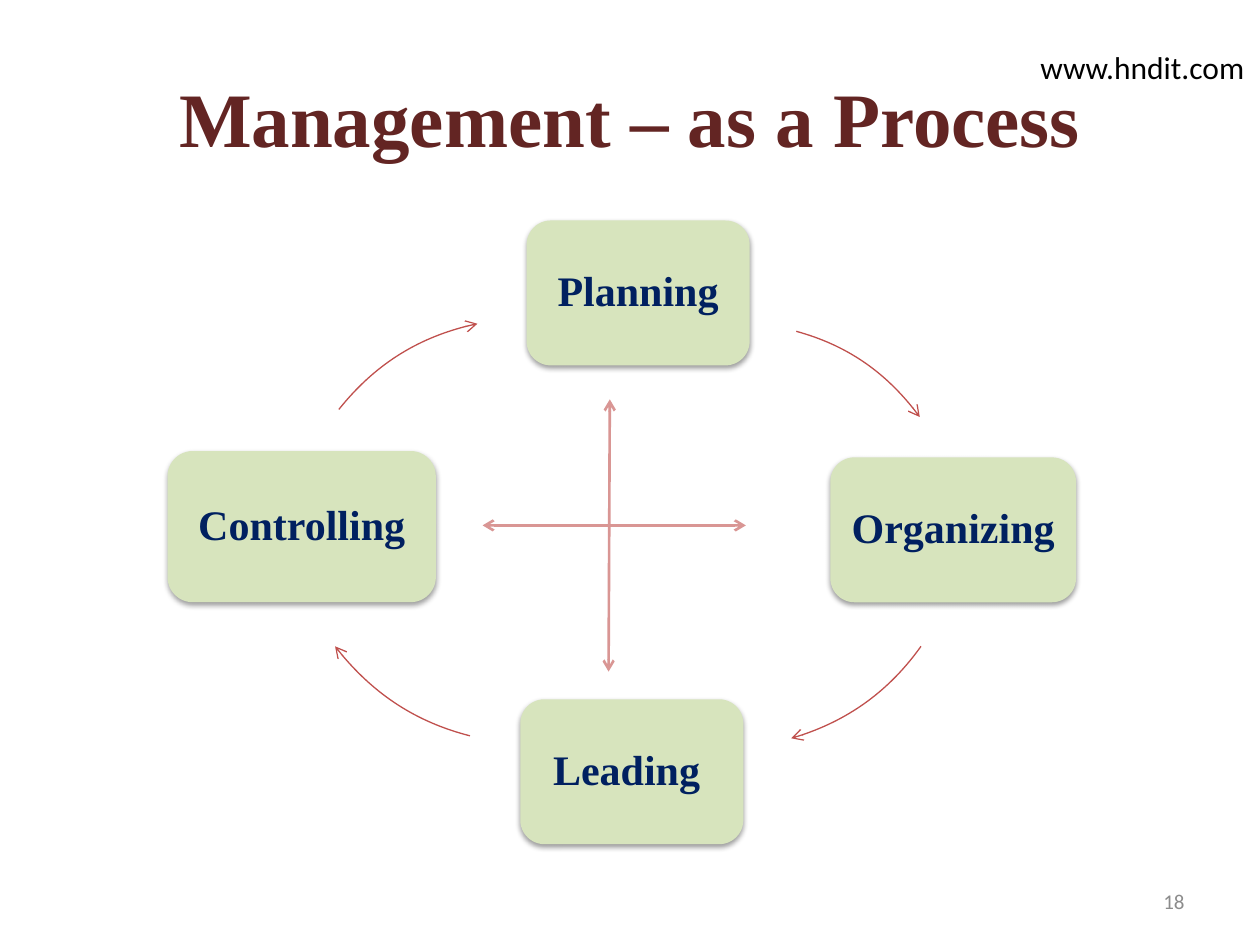
from lxml import etree
from pptx import Presentation
from pptx.dml.color import RGBColor
from pptx.enum.shapes import MSO_CONNECTOR, MSO_SHAPE
from pptx.enum.text import MSO_ANCHOR, PP_ALIGN
from pptx.oxml.ns import qn
from pptx.util import Inches, Pt

COLORS = {"title": "632523", "box": "D7E4BD", "label": "002060", "arc": "C0504D",
          "cross": "D99694", "number": "8C8C8C", "url": "000000"}

# text, box, anchor, alignment, wrap, font
TEXTS = [
    ("Management – as a Process", (0.5, 0.3, 9, 1.25), MSO_ANCHOR.MIDDLE, PP_ALIGN.CENTER, True,
     {"name": "Times New Roman", "size": Pt(44), "bold": True, "color": "title"}),
    ("18", (7.17, 6.95, 2.33, 0.4), MSO_ANCHOR.MIDDLE, PP_ALIGN.RIGHT, True,
     {"name": "Calibri", "size": Pt(12), "color": "number"}),
    ("www.hndit.com", (8.16, 0.33, 1.84, 0.4), MSO_ANCHOR.TOP, PP_ALIGN.LEFT, False,
     {"name": "Calibri", "size": Pt(18), "color": "url"}),
]
LABEL_FONT = {"name": "Times New Roman", "size": Pt(24), "bold": True, "color": "label"}
STEPS = [
    ("Planning", (4.18, 1.75, 1.77, 1.15)),
    ("Organizing ", (6.59, 3.63, 1.95, 1.15)),
    ("Leading ", (4.13, 5.55, 1.77, 1.15)),
    ("Controlling", (1.33, 3.58, 2.13, 1.2)),
]
# corner of the square around the whole circle; start, two control points, end of the curve
CIRCLE = 3.8
ARCS = [
    ((3.89, 2.55), [(6.32, 2.63), (6.72, 2.74), (7.06, 2.98), (7.3, 3.31)]),
    ((3.87, 2.13), [(7.31, 5.13), (7.06, 5.48), (6.7, 5.74), (6.28, 5.86)]),
    ((2.28, 2.09), [(3.73, 5.84), (3.3, 5.73), (2.93, 5.48), (2.66, 5.13)]),
    ((2.28, 2.53), [(2.69, 3.25), (2.97, 2.9), (3.35, 2.66), (3.79, 2.57)]),
]
CROSS = [(4.84, 3.17, 4.83, 5.33), (3.83, 4.17, 5.92, 4.17)]


def inches(values):
    return [Inches(v) for v in values]


def rgb(key):
    return RGBColor.from_string(COLORS[key])


def write(sp, text, font, anchor, align, wrap=True):
    tf = sp.text_frame
    tf.word_wrap = wrap
    tf.vertical_anchor = anchor
    p = tf.paragraphs[0]
    p.alignment = align
    r = p.add_run()
    r.text = text
    for name, value in font.items():
        if name == "color":
            r.font.color.rgb = rgb(value)
        else:
            setattr(r.font, name, value)
    return tf


def add_soft_shadow(sp):
    sp.shadow.inherit = False
    effects = sp._element.spPr.find(qn("a:effectLst"))
    shadow = etree.SubElement(effects, qn("a:outerShdw"), blurRad="40000", dist="20000",
                              dir="5400000", rotWithShape="0")
    color = etree.SubElement(shadow, qn("a:srgbClr"), val="000000")
    etree.SubElement(color, qn("a:alpha"), val="38000")


def style_line(sp, color, width, ends):
    sp.line.color.rgb = rgb(color)
    sp.line.width = Pt(width)
    for end in ends:
        etree.SubElement(sp.line._get_or_add_ln(), qn(f"a:{end}"), type="arrow")


def add_step(s, label, box):
    sp = s.shapes.add_shape(MSO_SHAPE.ROUNDED_RECTANGLE, *inches(box))
    sp.fill.solid()
    sp.fill.fore_color.rgb = rgb("box")
    sp.line.fill.background()
    add_soft_shadow(sp)
    tf = write(sp, label, LABEL_FONT, MSO_ANCHOR.MIDDLE, PP_ALIGN.CENTER)
    tf.paragraphs[0].line_spacing = 0.9
    for side in ("left", "right", "top", "bottom"):
        setattr(tf, f"margin_{side}", Inches(0.1))


def add_arc(s, corner, points):
    """Draw one cubic curve inside the square of its whole circle."""
    start, *rest = [inches(pt) for pt in points]
    fb = s.shapes.build_freeform(*start)
    fb.add_line_segments(rest, close=False)
    sp = fb.convert_to_shape()
    path = sp._element.spPr.find(".//" + qn("a:path"))
    curve = etree.Element(qn("a:cubicBezTo"))
    for segment in path.findall(qn("a:lnTo")):
        curve.append(segment[0])
        path.remove(segment)
    path.append(curve)

    left, top = inches(corner)
    shift = {"x": sp.left - left, "y": sp.top - top}
    for pt in path.iter(qn("a:pt")):
        for axis, offset in shift.items():
            pt.set(axis, str(int(pt.get(axis)) + offset))
    for side in ("w", "h"):
        path.set(side, str(Inches(CIRCLE)))
    sp.left, sp.top = left, top
    sp.width = sp.height = Inches(CIRCLE)

    sp.fill.background()
    sp.shadow.inherit = False
    style_line(sp, "arc", 0.75, ["tailEnd"])


def add_double_arrow(s, ends):
    line = s.shapes.add_connector(MSO_CONNECTOR.STRAIGHT, *inches(ends))
    style_line(line, "cross", 1.5, ["headEnd", "tailEnd"])
    etree.SubElement(line._element.spPr, qn("a:effectLst"))


def main():
    prs = Presentation()
    prs.slide_width, prs.slide_height = Inches(10), Inches(7.5)
    s = prs.slides.add_slide(prs.slide_layouts[6])
    for (label, box), (corner, points) in zip(STEPS, ARCS):
        add_step(s, label, box)
        add_arc(s, corner, points)
    for ends in CROSS:
        add_double_arrow(s, ends)
    for text, box, anchor, align, wrap, font in TEXTS:
        write(s.shapes.add_textbox(*inches(box)), text, font, anchor, align, wrap)
    prs.save("out.pptx")


if __name__ == "__main__":
    main()
